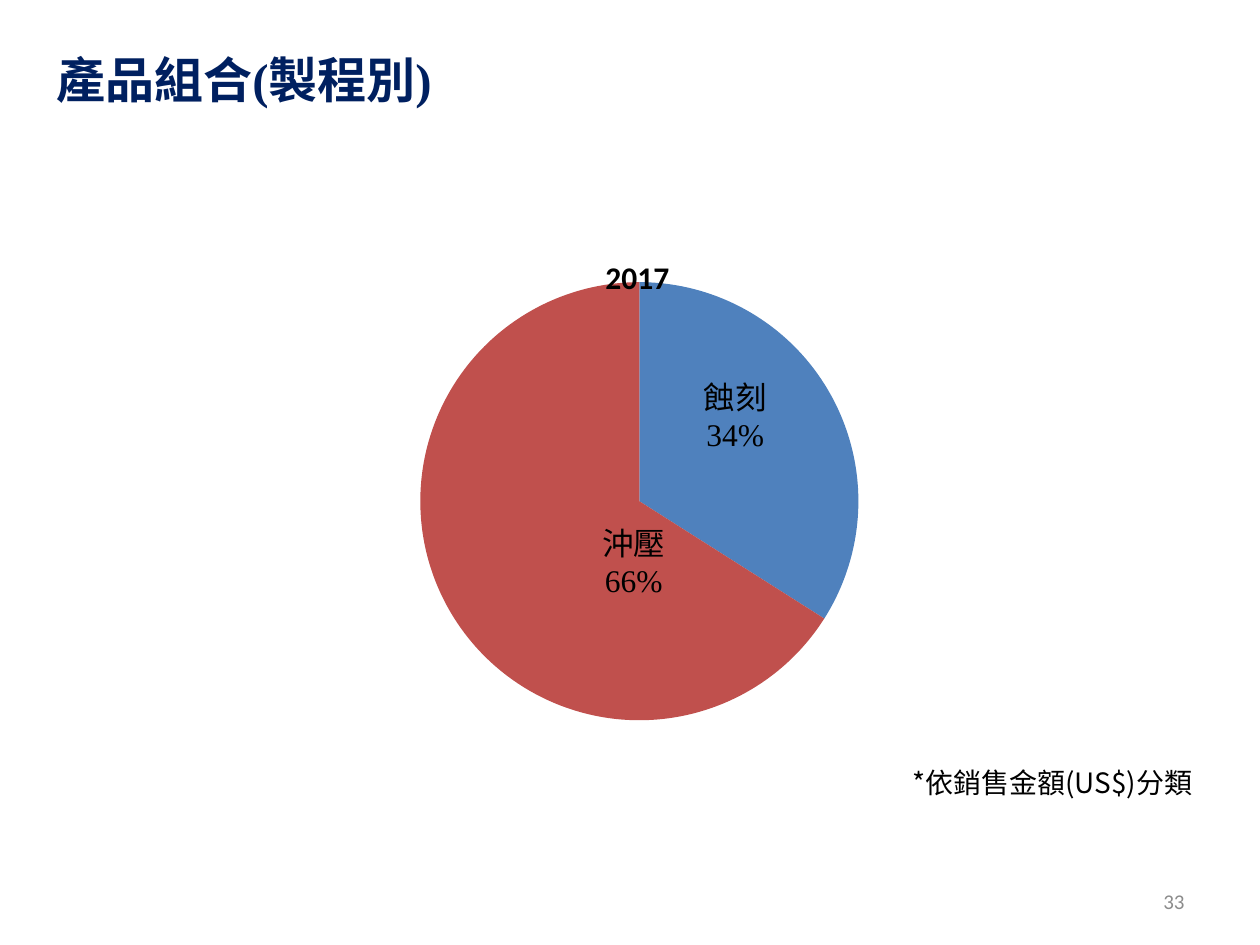
from dataclasses import dataclass

from pptx import Presentation, util as u
from pptx.chart.data import CategoryChartData
from pptx.dml.color import RGBColor
from pptx.enum import chart as ch, text
from pptx.oxml import parse_xml
from pptx.oxml.ns import nsdecls, qn

WIDTH, HEIGHT = u.Inches(10), u.Inches(7.5)


@dataclass(frozen=True)
class Theme:
    """Colours, fonts and type sizes of the slide."""
    navy: str = "002060"
    black: str = "000000"
    grey: str = "8C8C8C"
    etched: str = "4F81BD"
    stamped: str = "C0504D"
    serif: str = "Times New Roman"
    sans: str = "Calibri"
    cjk: str = "Noto Sans CJK SC"
    heading: int = 28
    label: int = 18
    note: int = 16
    number: int = 12
    base: int = 10


THEME = Theme()


def share(left, top, width, height):
    """Turn shares of the slide into a box in slide units."""
    return (int(WIDTH * left), int(HEIGHT * top),
            int(WIDTH * width), int(HEIGHT * height))


def style(frame, face, size, color, bold=False, align=None):
    """Format every run of a text frame."""
    for paragraph in frame.paragraphs:
        if align is not None:
            paragraph.alignment = align
        for run in paragraph.runs:
            run.font.name, run.font.size = face, u.Pt(size)
            run.font.bold = bold
            run.font.color.rgb = RGBColor.from_string(color)
            latin = run.font._element.find(qn("a:latin"))
            latin.addnext(parse_xml(
                f'<a:ea {nsdecls("a")} typeface="{THEME.cjk}"/>'))


def manual_layout(x, y, edge=False):
    """Build a chart layout at a share of the chart's size."""
    modes = '<c:xMode val="edge"/><c:yMode val="edge"/>' if edge else ""
    return parse_xml(
        f'<c:layout {nsdecls("c")}><c:manualLayout>{modes}'
        f'<c:x val="{x}"/><c:y val="{y}"/></c:manualLayout></c:layout>')


def add_heading(slide, box, wording):
    """Place the slide title."""
    title = slide.shapes.title
    title.left, title.top, title.width, title.height = box
    frame = title.text_frame
    frame.text = wording
    frame.vertical_anchor = text.MSO_ANCHOR.MIDDLE
    style(frame, THEME.serif, THEME.heading, THEME.navy, True,
          text.PP_ALIGN.LEFT)


def add_right_line(slide, box, wording, face, size, color, anchor):
    """Place one right-aligned line of text."""
    frame = slide.shapes.add_textbox(*box).text_frame
    frame.word_wrap = True
    frame.vertical_anchor = anchor
    frame.text = wording
    style(frame, face, size, color, align=text.PP_ALIGN.RIGHT)


def add_process_mix(slide, box):
    """Place the pie of sales by process."""
    processes = [("Etched", 34, "蝕刻\n34%", THEME.etched, (0, -0.07)),
                 ("Stamped", 66, "沖壓\n66%", THEME.stamped, (0.12, 0.01))]
    data = CategoryChartData()
    data.categories = [process[0] for process in processes]
    data.add_series("Series 1", [process[1] for process in processes])
    chart = slide.shapes.add_chart(ch.XL_CHART_TYPE.PIE, *box, data).chart
    chart.font.name, chart.font.size = THEME.sans, u.Pt(THEME.base)
    chart.font.color.rgb = RGBColor.from_string(THEME.black)
    chart.has_legend = False

    chart.has_title = True
    year = chart.chart_title
    year.text_frame.text = "2017"
    style(year.text_frame, THEME.sans, THEME.label, THEME.black, True)
    year.include_in_layout = False
    for layout in year._element.findall(qn("c:layout")):
        year._element.remove(layout)
    year._element.find(qn("c:tx")).addnext(manual_layout(0.46, 0.05, True))

    plot_area = chart._chartSpace.chart.plotArea
    for layout in plot_area.findall(qn("c:layout")):
        plot_area.remove(layout)
    plot_area.insert(0, parse_xml(
        f'<c:layout {nsdecls("c")}><c:manualLayout>'
        '<c:layoutTarget val="inner"/><c:xMode val="edge"/>'
        '<c:yMode val="edge"/><c:x val="0.03"/><c:y val="0.115"/>'
        '<c:w val="0.965"/><c:h val="0.865"/></c:manualLayout></c:layout>'))

    plot = chart.plots[0]
    plot.vary_by_categories = True
    for index, (_, _, wording, color, shift) in enumerate(processes):
        point = plot.series[0].points[index]
        point.format.fill.solid()
        point.format.fill.fore_color.rgb = RGBColor.from_string(color)
        label = point.data_label
        label.text_frame.text = wording
        style(label.text_frame, THEME.serif, THEME.label, THEME.black)
        label.position = ch.XL_LABEL_POSITION.CENTER
        element = label._dLbl
        element.find(qn("c:idx")).addnext(manual_layout(*shift))
        for flag, shown in (("c:showVal", "0"), ("c:showCatName", "1"),
                            ("c:showPercent", "1")):
            element.find(qn(flag)).set("val", shown)


def main():
    """Build and save the slide."""
    deck = Presentation()
    deck.slide_width, deck.slide_height = WIDTH, HEIGHT
    slide = deck.slides.add_slide(deck.slide_layouts[5])
    add_heading(slide, share(0.035, 0, 0.9, 1 / 6), "產品組合(製程別)")
    add_right_line(slide, share(0.717, 0.927, 0.233, 0.053), "33",
                   THEME.sans, THEME.number, THEME.grey,
                   text.MSO_ANCHOR.MIDDLE)
    add_right_line(slide, share(0.61, 0.804, 0.346, 0.049),
                   "*依銷售金額(US$)分類", THEME.cjk, THEME.note,
                   THEME.black, text.MSO_ANCHOR.TOP)
    add_process_mix(slide, share(0.201, 0.237, 0.598, 0.536))
    deck.save("out.pptx")


if __name__ == "__main__":
    main()
